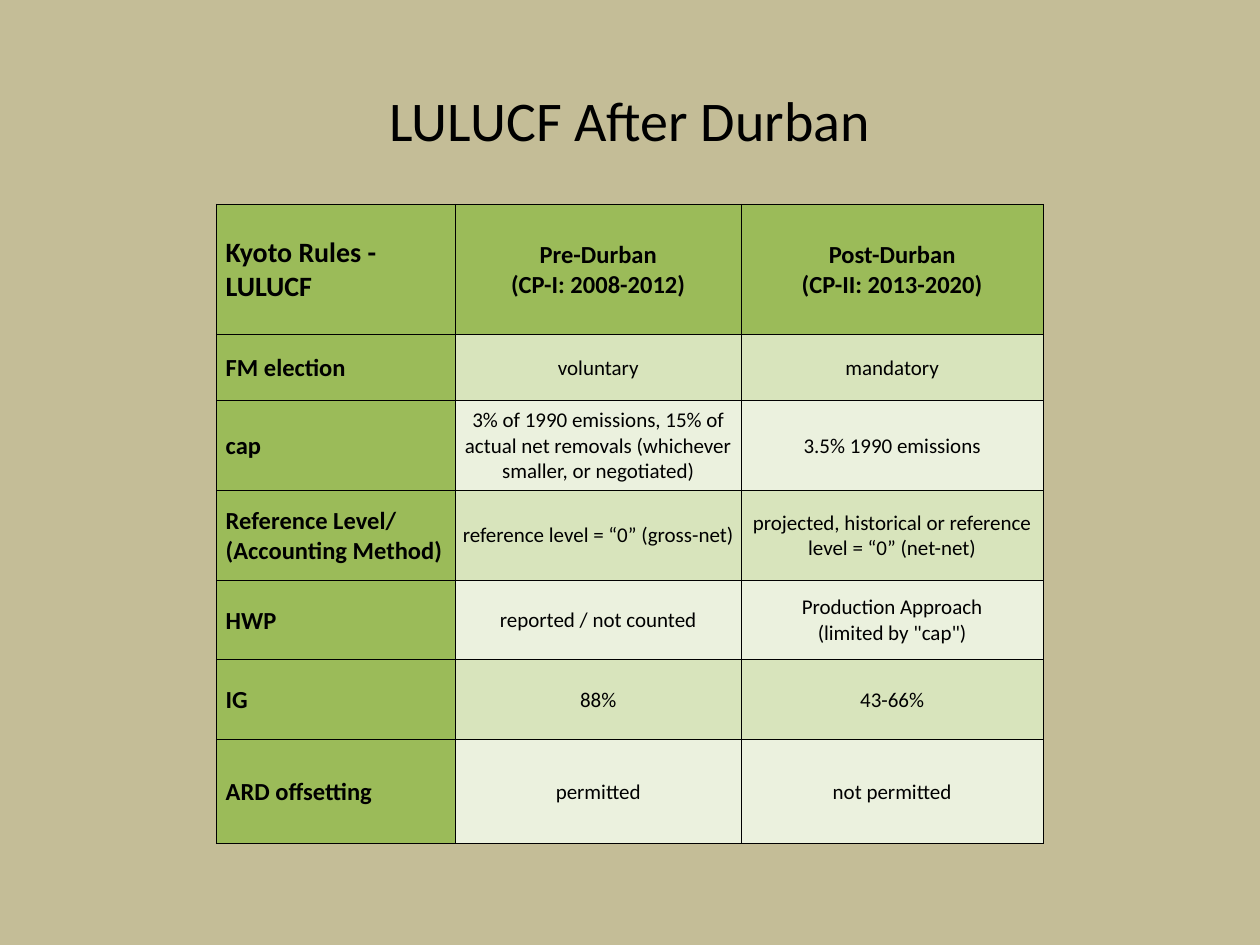
from lxml import etree
from pptx import Presentation
from pptx import util as u
from pptx.dml.color import RGBColor
from pptx.enum import text
from pptx.oxml.ns import qn

COLORS = {
    "background": "C4BD97",
    "header": "9BBB59",
    "odd": "D8E4BC",
    "even": "EBF1DE",
    "ink": "000000",
}
FONT = "Calibri"
COL_WIDTHS = [4.82, 5.76, 6.09]
ROW_HEIGHTS = [2.62, 1.33, 1.81, 1.81, 1.61, 1.61, 2.1]
RULES = [
    ["Kyoto Rules - LULUCF", "Pre-Durban\n(CP-I: 2008-2012)", "Post-Durban\n(CP-II: 2013-2020)"],
    ["FM election", "voluntary", "mandatory"],
    ["cap",
     "3% of 1990 emissions, 15% of actual net removals (whichever smaller, or negotiated)",
     "3.5% 1990 emissions"],
    ["Reference Level/\n(Accounting Method)",
     "reference level = “0” (gross-net)",
     "projected, historical or reference level = “0” (net-net)"],
    ["HWP", "reported / not counted", "Production Approach\n(limited by \"cap\")"],
    ["IG", "88%", "43-66%"],
    ["ARD offsetting", "permitted", "not permitted"],
]


def rgb(name):
    return RGBColor.from_string(COLORS[name])


def write(tf, content, size=12, bold=False, align=text.PP_ALIGN.CENTER, indent=0):
    """Fill a text frame, one paragraph per line of content."""
    for i, line in enumerate(content.split("\n")):
        p = tf.paragraphs[0] if i == 0 else tf.add_paragraph()
        p.alignment = align
        if indent:
            p._p.get_or_add_pPr().set("marL", str(u.Cm(indent)))
        r = p.add_run()
        r.text = line
        r.font.name = FONT
        r.font.size = u.Pt(size)
        r.font.bold = bold
        r.font.color.rgb = rgb("ink")


def set_borders(cell, **widths):
    """Draw solid borders; widths in points, keyed L, R, T and B."""
    tcPr = cell._tc.get_or_add_tcPr()
    for i, (side, width) in enumerate(widths.items()):
        ln = etree.Element(qn(f"a:ln{side}"), w=str(u.Pt(width)))
        fill = etree.SubElement(ln, qn("a:solidFill"))
        etree.SubElement(fill, qn("a:srgbClr"), val=COLORS["ink"])
        tcPr.insert(i, ln)


def format_cell(cell, content, row, col):
    is_header = row == 0 or col == 0
    cell.margin_left = cell.margin_right = cell.margin_top = u.Cm(0.03)
    cell.margin_bottom = 0
    cell.vertical_anchor = text.MSO_ANCHOR.MIDDLE
    cell.fill.solid()
    cell.fill.fore_color.rgb = rgb("header" if is_header else "odd" if row % 2 else "even")
    set_borders(cell, L=1 if col == 1 else 0.5, R=1 if col == 0 else 0.5, T=0.5, B=0.5)

    size = 16 if row == col == 0 else 14 if is_header else 12
    if col == 0:
        write(cell.text_frame, content, size=size, bold=True,
              align=text.PP_ALIGN.LEFT, indent=0.16)
    else:
        write(cell.text_frame, content, size=size, bold=is_header)


def add_title(s, content):
    tf = s.shapes.add_textbox(u.Cm(2.9), u.Cm(1.6), u.Cm(19.6), u.Cm(1.62)).text_frame
    tf.word_wrap = True
    tf.auto_size = text.MSO_AUTO_SIZE.SHAPE_TO_FIT_TEXT
    write(tf, content, size=32)


def add_rules_table(s):
    table = s.shapes.add_table(
        len(RULES), len(COL_WIDTHS), u.Cm(4.36), u.Cm(4.12),
        u.Cm(sum(COL_WIDTHS)), u.Cm(sum(ROW_HEIGHTS))).table
    table.horz_banding = False
    for column, width in zip(table.columns, COL_WIDTHS):
        column.width = u.Cm(width)
    for row, height in zip(table.rows, ROW_HEIGHTS):
        row.height = u.Cm(height)
    for i, contents in enumerate(RULES):
        for j, content in enumerate(contents):
            format_cell(table.cell(i, j), content, i, j)


def main():
    prs = Presentation()
    prs.slide_width, prs.slide_height = u.Cm(25.4), u.Cm(19.05)
    s = prs.slides.add_slide(prs.slide_layouts[6])
    s.background.fill.solid()
    s.background.fill.fore_color.rgb = rgb("background")
    add_rules_table(s)
    add_title(s, "LULUCF After Durban")
    prs.save("out.pptx")


if __name__ == "__main__":
    main()
